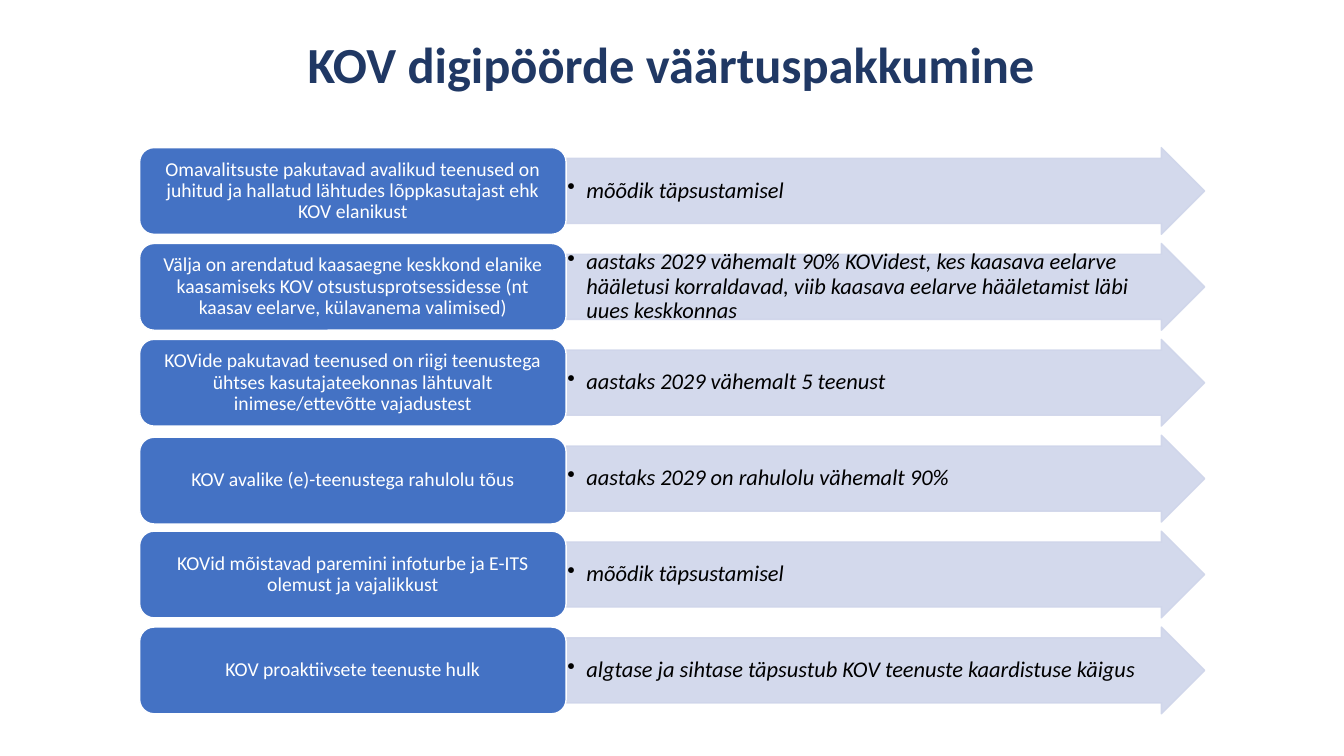
import pptx
import pptx.dml.color
import pptx.enum.shapes
import pptx.enum.text
import pptx.oxml
import pptx.oxml.ns
import pptx.util

Cm = pptx.util.Cm
Pt = pptx.util.Pt
SHAPES = pptx.enum.shapes.MSO_SHAPE
ALIGN = pptx.enum.text.PP_ALIGN

TITLE = "KOV digipöörde väärtuspakkumine"
GOALS = [
    ("Omavalitsuste pakutavad avalikud teenused on juhitud ja hallatud lähtudes lõppkasutajast ehk KOV elanikust",
     "mõõdik täpsustamisel"),
    ("Välja on arendatud kaasaegne keskkond elanike kaasamiseks KOV otsustusprotsessidesse (nt kaasav eelarve, külavanema valimised)",
     "aastaks 2029 vähemalt 90% KOVidest, kes kaasava eelarve hääletusi korraldavad, viib kaasava eelarve hääletamist läbi uues keskkonnas"),
    ("KOVide pakutavad teenused on riigi teenustega ühtses kasutajateekonnas lähtuvalt inimese/ettevõtte vajadustest",
     "aastaks 2029 vähemalt 5 teenust"),
    ("KOV avalike (e)-teenustega rahulolu tõus",
     "aastaks 2029 on rahulolu vähemalt 90%"),
    ("KOVid mõistavad paremini infoturbe ja E-ITS olemust ja vajalikkust",
     "mõõdik täpsustamisel"),
    ("KOV proaktiivsete teenuste hulk",
     "algtase ja sihtase täpsustub KOV teenuste kaardistuse käigus"),
]
BOX_SHIFTS = {3: 0.05}
COLORS = {"title": "203864", "box": "4472C4", "arrow": "CFD5EA",
          "white": "FFFFFF", "black": "000000"}
FONT = "Calibri"
LEFT, TOP, PITCH, HEIGHT = 3.51, 3.71, 2.41, 2.18
BOX_WIDTH, ARROW_WIDTH = 10.72, 16.05


def rgb(name):
    return pptx.dml.color.RGBColor.from_string(COLORS[name])


def write(frame, text, size, color, align, bold=False, italic=False, margins=(0.03, 0.03)):
    frame.word_wrap = True
    frame.auto_size = pptx.enum.text.MSO_AUTO_SIZE.NONE
    frame.vertical_anchor = pptx.enum.text.MSO_ANCHOR.MIDDLE
    frame.margin_left = frame.margin_right = Cm(margins[0])
    frame.margin_top = frame.margin_bottom = Cm(margins[1])
    para = frame.paragraphs[0]
    para.alignment = align
    para.line_spacing = 0.9
    span = para.add_run()
    span.text = text
    span.font.name = FONT
    span.font.size = Pt(size)
    span.font.bold = bold
    span.font.italic = italic
    span.font.color.rgb = rgb(color)
    return para


def add_block(group, kind, left, top, width, fill, line):
    block = group.shapes.add_shape(kind, Cm(left), Cm(top), Cm(width), Cm(HEIGHT))
    block.shadow.inherit = False
    block.fill.solid()
    block.fill.fore_color.rgb = rgb(fill)
    block.line.color.rgb = rgb(line)
    block.line.width = Pt(1)
    return block


def set_opacity(shape, percent):
    for color in shape.element.spPr.iter(pptx.oxml.ns.qn("a:srgbClr")):
        alpha = pptx.oxml.parse_xml(f'<a:alpha {pptx.oxml.ns.nsdecls("a")} val="{percent * 1000}"/>')
        color.append(alpha)


def add_bullet(para, indent):
    properties = para._p.get_or_add_pPr()
    properties.set("marL", str(Cm(indent)))
    properties.set("indent", str(-Cm(indent)))
    properties.append(pptx.oxml.parse_xml(f'<a:buChar {pptx.oxml.ns.nsdecls("a")} char="•"/>'))


def main():
    deck = pptx.Presentation()
    deck.slide_width, deck.slide_height = Cm(33.78), Cm(19)
    page = deck.slides.add_slide(deck.slide_layouts[5])

    title = page.shapes.title
    title.left, title.top, title.width, title.height = Cm(2.31), Cm(0.48), Cm(29.13), Cm(2.41)
    write(title.text_frame, TITLE, 36, "title", ALIGN.CENTER, bold=True, margins=(0.25, 0.13))

    diagram = page.shapes.add_group_shape()
    for row, (goal, measure) in enumerate(GOALS):
        top = TOP + row * PITCH
        arrow = add_block(diagram, SHAPES.RIGHT_ARROW, LEFT + BOX_WIDTH, top, ARROW_WIDTH, "arrow", "arrow")
        arrow.adjustments[0], arrow.adjustments[1] = 0.75, 0.5
        set_opacity(arrow, 90)
        para = write(arrow.text_frame, measure, 16, "black", ALIGN.LEFT, italic=True)
        add_bullet(para, 0.48)

        box = add_block(diagram, SHAPES.ROUNDED_RECTANGLE, LEFT, top + BOX_SHIFTS.get(row, 0),
                        BOX_WIDTH, "box", "white")
        write(box.text_frame, goal, 14, "white", ALIGN.CENTER, margins=(0.15, 0.08))

    deck.save("out.pptx")


if __name__ == "__main__":
    main()
